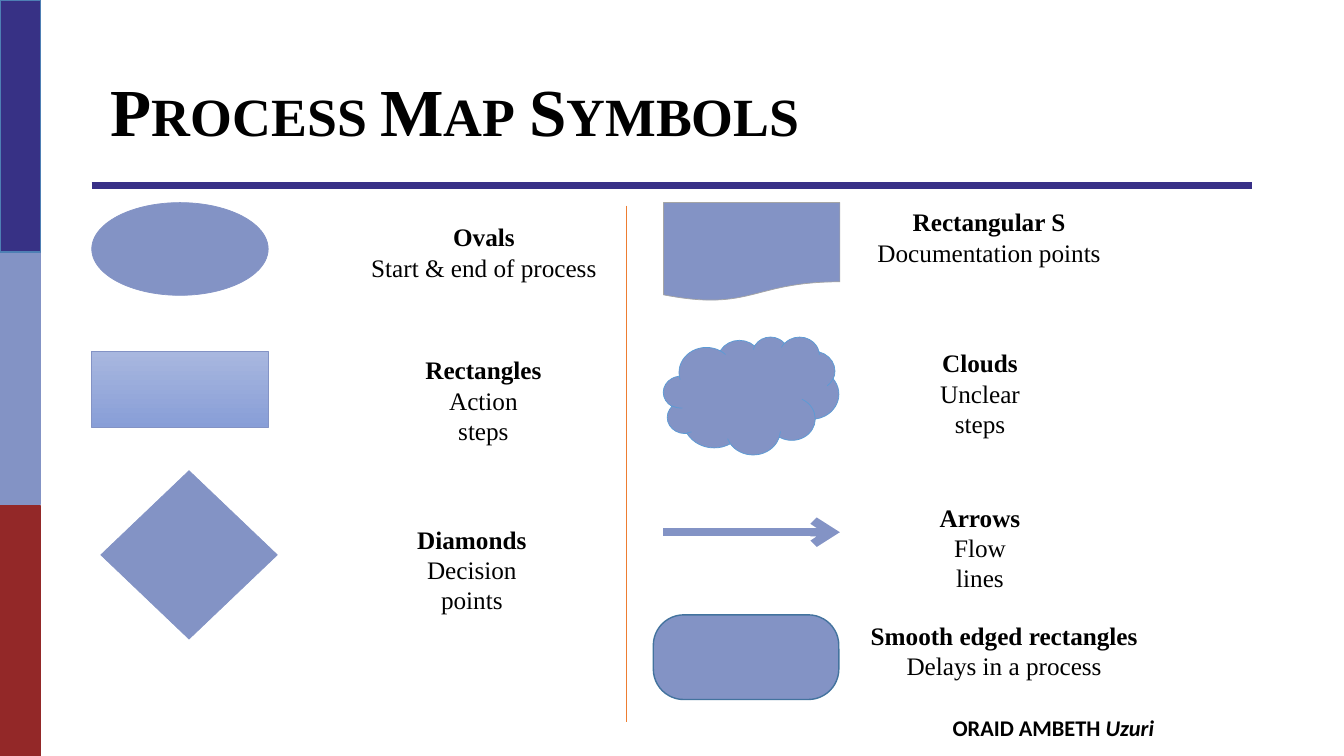
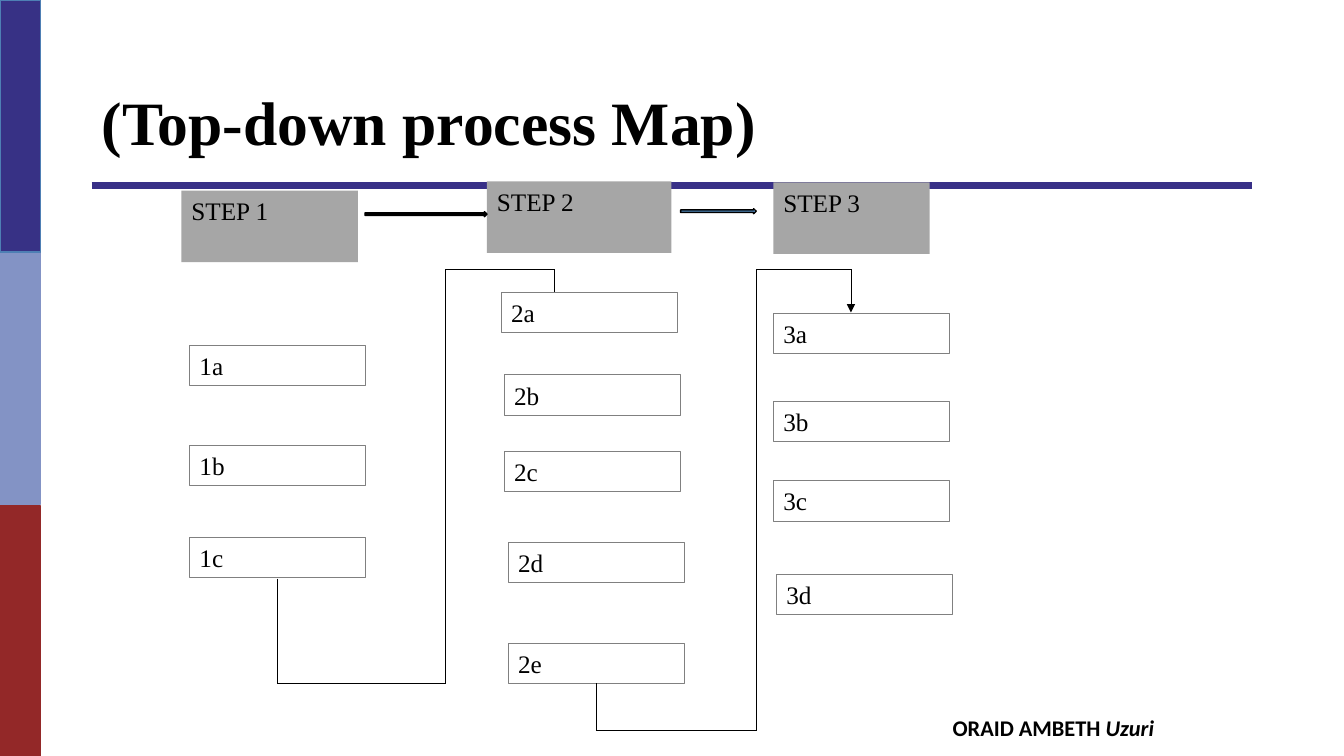
from itertools import pairwise

from lxml.etree import SubElement
from pptx import Presentation
from pptx.dml.color import RGBColor
from pptx.enum.shapes import MSO_CONNECTOR, MSO_SHAPE
from pptx.enum.text import MSO_ANCHOR, MSO_AUTO_SIZE, PP_ALIGN
from pptx.oxml.ns import qn
from pptx.util import Inches, Pt

BLACK, INDIGO, PERIWINKLE, RED = "000000", "373185", "8393C5", "932828"
STEP_GRAY, BOX_GRAY = "A6A6A6", "808080"
SERIF, SANS = "Times New Roman", "Calibri"

BANDS = [
    ((0, 2.5, 0.4, 2.5), PERIWINKLE, PERIWINKLE),
    ((0, 5.02, 0.4, 2.48), RED, RED),
    ((0, 0, 0.4, 2.5), INDIGO, "4E7FB4"),
]
FOOTER = [("ORAID AMBETH ", False), ("Uzuri", True)]

SYMBOLS = [
    (MSO_SHAPE.OVAL, (0.91, 2.01, 1.75, 0.92), PERIWINKLE, 0.5),
    (MSO_SHAPE.RECTANGLE, (0.91, 3.49, 1.75, 0.75), PERIWINKLE, 0.5),
    (MSO_SHAPE.DIAMOND, (1, 4.67, 1.75, 1.67), PERIWINKLE, 0.5),
    (MSO_SHAPE.FLOWCHART_DOCUMENT, (6.58, 2.01, 1.75, 0.98), "A5A5A5", 0.5),
    (MSO_SHAPE.CLOUD, (6.58, 3.34, 1.74, 1.17), "5B9BD5", 0.5),
    (MSO_SHAPE.ROUNDED_RECTANGLE, (6.48, 6.1, 1.84, 0.84), "43739E", 1),
]
SYMBOL_LABELS = [
    ("Ovals", "Start & end of process", (3.58, 2.15, 2.44)),
    ("Rectangles", "Action\vsteps", (4.08, 3.47, 1.43)),
    ("Diamonds", "Decision\vpoints", (3.81, 5.15, 1.74)),
    ("Rectangular S", "Documentation points", (8.6, 2, 2.42)),
    ("Clouds", "Unclear\vsteps", (8.96, 3.4, 1.52)),
    ("Arrows", "Flow\vlines", (9.12, 4.93, 1.2)),
    ("Smooth edged rectangles", "Delays in a process", (8.51, 6.1, 2.9)),
]

STEPS = [
    ("STEP 1", (1.8, 1.89, 1.75), [
        ("1a", 1.88, 3.43), ("1b", 1.88, 4.42), ("1c", 1.88, 5.33)]),
    ("STEP 2", (4.83, 1.8, 1.83), [
        ("2a", 4.97, 2.9), ("2b", 5, 3.72), ("2c", 5, 4.48),
        ("2d", 5.04, 5.38), ("2e", 5.04, 6.38)]),
    ("STEP 3", (7.67, 1.81, 1.55), [
        ("3a", 7.67, 3.11), ("3b", 7.67, 3.98), ("3c", 7.67, 4.77),
        ("3d", 7.7, 5.7)]),
]
STEP_HEIGHT, BOX_WIDTH, BOX_HEIGHT = 0.71, 1.75, 0.4
STEP_ARROWS = [((3.62, 2.1, 1.21, 0.05), BLACK), ((6.75, 2.07, 0.75, 0.05), "5B9BD5")]
FLOW_PATHS = [
    ([(2.75, 5.74), (2.75, 6.78), (4.42, 6.78), (4.42, 2.67), (5.5, 2.67), (5.5, 2.9)], None),
    ([(5.91, 6.78), (5.91, 7.25), (7.5, 7.25), (7.5, 2.67), (8.44, 2.67), (8.44, 3.1)], "triangle"),
]


def color(value):
    return RGBColor.from_string(value)


def format_run(run, size, font=SERIF, bold=False, italic=False):
    run.font.size = Pt(size)
    run.font.name = font
    run.font.bold = bold
    run.font.italic = italic
    run.font.color.rgb = color(BLACK)


def add_box(slide, kind, place, fill=None, line=None, width=1):
    shape = slide.shapes.add_shape(kind, *map(Inches, place))
    shape.shadow.inherit = False
    if fill:
        shape.fill.solid()
        shape.fill.fore_color.rgb = color(fill)
    else:
        shape.fill.background()
    if line:
        shape.line.color.rgb = color(line)
        shape.line.width = Pt(width)
    else:
        shape.line.fill.background()
    return shape


def add_text_box(slide, kind_place, text, fill=None, line=None):
    shape = add_box(slide, MSO_SHAPE.RECTANGLE, kind_place, fill, line, 0.75)
    shape.text_frame.text = text
    shape.text_frame.vertical_anchor = MSO_ANCHOR.TOP
    paragraph = shape.text_frame.paragraphs[0]
    paragraph.alignment = PP_ALIGN.LEFT
    format_run(paragraph.runs[0], 18)


def add_line(slide, start, end, line, width, arrowhead=None):
    connector = slide.shapes.add_connector(
        MSO_CONNECTOR.STRAIGHT, *map(Inches, (*start, *end)))
    connector.line.color.rgb = color(line)
    connector.line.width = Pt(width)
    if arrowhead:
        SubElement(connector.line._get_or_add_ln(), qn("a:tailEnd"), type=arrowhead)
    SubElement(connector.element.spPr, qn("a:effectLst"))
    return connector


def add_footer(slide):
    footer = slide.shapes.add_textbox(*map(Inches, (9.35, 7.04, 3.83, 0.36)))
    footer.text_frame.word_wrap = True
    for text, italic in FOOTER:
        run = footer.text_frame.paragraphs[0].add_run()
        run.text = text
        format_run(run, 16, SANS, True, italic)
    return footer


def decorate_layout(layout, slide):
    parts = [add_box(slide, MSO_SHAPE.RECTANGLE, *band) for band in BANDS]
    parts.append(add_line(slide, (0.91, 1.84), (12.42, 1.84), "383087", 4.5))
    parts.append(add_footer(slide))
    for part in parts:
        layout.shapes.element.append(part.element)


def set_title(slide, text, place, size, small_caps=False):
    title = slide.shapes.title
    title.left, title.top, title.width, title.height = map(Inches, place)
    frame = title.text_frame
    frame.text = text
    frame.word_wrap = True
    frame.auto_size = MSO_AUTO_SIZE.NONE
    frame.vertical_anchor = MSO_ANCHOR.MIDDLE
    paragraph = frame.paragraphs[0]
    paragraph.alignment = PP_ALIGN.LEFT
    paragraph.line_spacing = 0.9
    format_run(paragraph.runs[0], size, bold=True)
    if small_caps:
        paragraph.runs[0].font._element.set("cap", "small")


def add_symbol_label(slide, name, meaning, place):
    label = slide.shapes.add_textbox(*map(Inches, (*place, 0.71)))
    frame = label.text_frame
    frame.word_wrap = False
    frame.text = name
    frame.add_paragraph().text = meaning
    for paragraph, bold in zip(frame.paragraphs, (True, False)):
        paragraph.alignment = PP_ALIGN.CENTER
        for run in paragraph.runs:
            format_run(run, 18, bold=bold)


def build_symbols(slide):
    set_title(slide, "Process Map Symbols", (1, 0.51, 11.4, 1.25), 48, True)
    for kind, place, line, width in SYMBOLS:
        shape = add_box(slide, kind, place, PERIWINKLE, line, width)
        if kind == MSO_SHAPE.RECTANGLE:
            shape.fill.gradient()
            shape.fill.gradient_angle = 270
            for stop, value in zip(shape.fill.gradient_stops, ("A8B7DF", "889ED7")):
                stop.color.rgb = color(value)
        elif kind == MSO_SHAPE.ROUNDED_RECTANGLE:
            shape.adjustments[0] = 0.36
    add_line(slide, (6.58, 5.28), (8.33, 5.28), PERIWINKLE, 6, "arrow")
    for label in SYMBOL_LABELS:
        add_symbol_label(slide, *label)
    add_line(slide, (6.21, 2.04), (6.21, 7.16), "ED7D31", 0.5)


def build_process_map(slide):
    set_title(slide, "(Top-down process Map)", (0.91, 0.75, 11.49, 1), 44)
    for step, place, boxes in STEPS:
        add_text_box(slide, (*place, STEP_HEIGHT), step, fill=STEP_GRAY)
        for text, left, top in boxes:
            add_text_box(slide, (left, top, BOX_WIDTH, BOX_HEIGHT), text, line=BOX_GRAY)
    for place, fill in STEP_ARROWS:
        add_box(slide, MSO_SHAPE.RIGHT_ARROW, place, fill, BLACK)
    for points, arrowhead in FLOW_PATHS:
        for start, end in pairwise(points):
            add_line(slide, start, end, BLACK, 0.5, arrowhead if end == points[-1] else None)


def main():
    presentation = Presentation()
    presentation.slide_width = Inches(13.33)
    presentation.slide_height = Inches(7.5)
    layout = presentation.slide_layouts.get_by_name("Title Only")
    symbols_slide = presentation.slides.add_slide(layout)
    decorate_layout(layout, symbols_slide)
    build_symbols(symbols_slide)
    build_process_map(presentation.slides.add_slide(layout))
    presentation.save("out.pptx")


if __name__ == "__main__":
    main()
